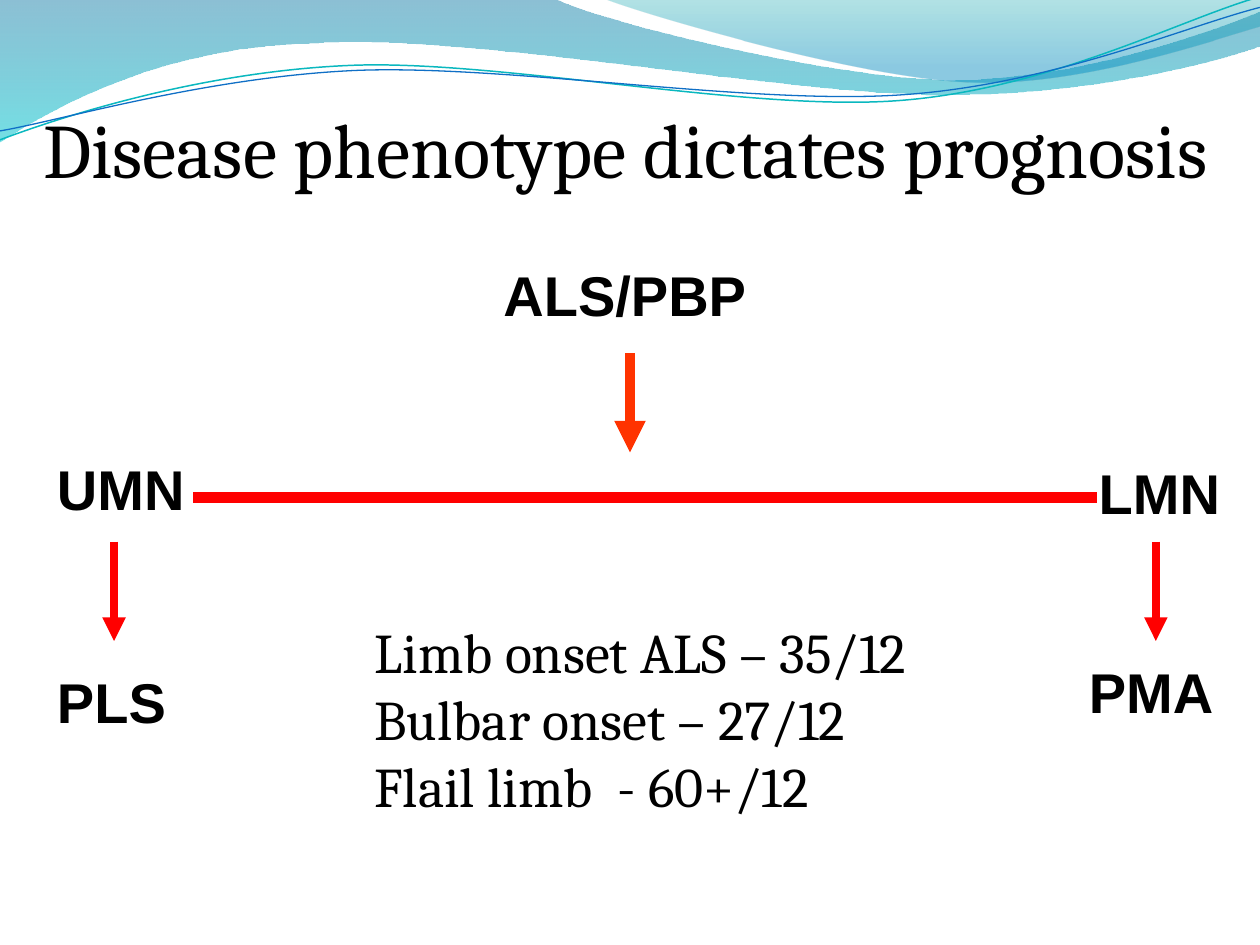
from lxml import etree
from pptx import Presentation
from pptx.dml.color import RGBColor
from pptx.enum.shapes import MSO_CONNECTOR
from pptx.enum.text import MSO_AUTO_SIZE
from pptx.oxml.ns import qn
from pptx.util import Cm, Pt

STRAIGHT = MSO_CONNECTOR.STRAIGHT
GROW = MSO_AUTO_SIZE.SHAPE_TO_FIT_TEXT

BLACK = RGBColor(0x00, 0x00, 0x00)
RED = RGBColor(0xFF, 0x00, 0x00)
ORANGE = RGBColor(0xFF, 0x33, 0x00)
DEEP_BLUE = RGBColor(0x00, 0x74, 0xA1)
AQUA = RGBColor(0x00, 0xC6, 0xCF)
TEAL = RGBColor(0x00, 0xA1, 0xA9)
SKY = RGBColor(0x00, 0x8B, 0xBF)
TURQUOISE = RGBColor(0x0A, 0xB8, 0xBF)
BLUE = RGBColor(0x0F, 0x6F, 0xC6)

WIDE_WAVE = [
    [(0, 0)],
    [(11.18, -0.03)],
    [(12.09, 0.43), (16.87, 1.6), (19.25, 1.6)],
    [(21.67, 1.6), (24.33, 0.66), (25.4, 0.23)],
    [(25.43, 0.91)],
    [(24.97, 1.12), (22.1, 1.93), (18.95, 1.91)],
    [(15.8, 1.9), (9.7, 0.71), (6.53, 0.86)],
    [(3.28, 0.91), (1.17, 2.11), (-0.03, 2.87)],
    [(0, 0)],
]
RIGHT_WAVE = [
    [(12.17, -0.03)],
    [(12.93, 0.28), (17.32, 1.57), (19.53, 1.65)],
    [(21.74, 1.75), (24.41, 0.81), (25.4, 0.53)],
    [(25.4, 0)],
    [(12.17, -0.03)],
]
TURQUOISE_STRAND = [
    [(0, 2.82)],
    [(1.22, 2.36), (4.01, 1.45), (7.04, 1.32)],
    [(10.03, 1.19), (15.06, 2.26), (18.11, 2.03)],
    [(21.16, 1.8), (23.83, 0.38), (25.35, -0.05)],
]
BLUE_STRAND = [
    [(0, 2.64)],
    [(1.19, 2.44), (4.17, 1.55), (7.19, 1.42)],
    [(10.24, 1.3), (15.16, 2.13), (18.21, 1.91)],
    [(21.23, 1.7), (23.9, 0.53), (25.4, 0.15)],
]


def bend(outline, segments):
    sides = list(outline._element.iter(qn("a:lnTo")))
    for side, segment in zip(sides, segments):
        if len(segment) == 3:
            curve = etree.Element(qn("a:cubicBezTo"))
            for x, y in segment:
                etree.SubElement(curve, qn("a:pt"), x=str(Cm(x) - outline.left),
                                 y=str(Cm(y) - outline.top))
            side.getparent().replace(side, curve)


def add_outline(page, segments, close):
    start, *corners = [(Cm(x), Cm(y)) for x, y in (segment[-1] for segment in segments)]
    builder = page.shapes.build_freeform(*start)
    builder.add_line_segments(corners, close=close)
    outline = builder.convert_to_shape()
    outline.shadow.inherit = False
    bend(outline, segments[1:])
    return outline


def add_wave(page, segments, stops):
    wave = add_outline(page, segments, True)
    wave.line.fill.background()
    wave.fill.gradient()
    wave.fill.gradient_angle = 270
    for stop, (position, color, opacity) in zip(wave.fill.gradient_stops, stops):
        stop.position = position
        stop.color.rgb = color
    colors = wave._element.spPr.iter(qn("a:srgbClr"))
    for element, (position, color, opacity) in zip(colors, stops):
        etree.SubElement(element, qn("a:alpha"), val=str(opacity * 1000))


def add_strand(page, segments, color, width):
    strand = add_outline(page, segments, False)
    strand.fill.background()
    strand.line.color.rgb = color
    strand.line.width = Pt(width)


def add_line(page, start, end, color, width, arrow=True):
    line = page.shapes.add_connector(STRAIGHT, *map(Cm, start + end))
    line.line.color.rgb = color
    line.line.width = Pt(width)
    properties = line._element.spPr
    if arrow:
        etree.SubElement(properties.find(qn("a:ln")), qn("a:tailEnd"), type="triangle")
    etree.SubElement(properties, qn("a:effectLst"))


def add_text(page, text, place, font, size, bold=False, wrap=True):
    box = page.shapes.add_textbox(*map(Cm, place))
    frame = box.text_frame
    frame.text = text
    frame.word_wrap = wrap
    frame.auto_size = GROW
    for para in frame.paragraphs:
        for span in para.runs:
            span.font.name = font
            span.font.size = Pt(size)
            span.font.bold = bold
            span.font.color.rgb = BLACK


def add_label(page, text, place, wrap=False):
    add_text(page, text, place, "Arial", 32, True, wrap)


def main():
    deck = Presentation()
    deck.slide_width, deck.slide_height = Cm(25.4), Cm(19.05)
    page = deck.slides.add_slide(deck.slide_layouts[6])

    add_wave(page, WIDE_WAVE, [(0, DEEP_BLUE, 45), (1, AQUA, 55)])
    add_wave(page, RIGHT_WAVE, [(0, TEAL, 30), (0.8, SKY, 45)])
    add_strand(page, TURQUOISE_STRAND, TURQUOISE, 0.85)
    add_strand(page, BLUE_STRAND, BLUE, 0.75)

    add_line(page, (3.9, 10.03), (22.11, 10.03), RED, 6, arrow=False)
    for x in (2.3, 23.3):
        add_line(page, (x, 10.92), (x, 12.92), RED, 4.5)
    add_line(page, (12.7, 7.12), (12.7, 9.12), ORANGE, 6)

    add_label(page, "LMN", (21.9, 9.12, 3.5, 1.6), wrap=True)
    add_label(page, "UMN", (0.9, 9.04, 3.1, 1.6))
    add_label(page, "ALS/PBP", (9.9, 5.13, 5.46, 1.6), wrap=True)
    add_label(page, "PLS", (0.9, 13.34, 2.72, 1.6))
    add_label(page, "PMA", (21.7, 13.13, 3.02, 1.6))

    add_text(page, "Disease phenotype dictates prognosis",
             (0.62, 1.92, 24.56, 4.01), "Cambria", 44)
    add_text(page, "Limb onset ALS – 35/12\nBulbar onset – 27/12\nFlail limb  - 60+/12",
             (7.3, 12.32, 12.6, 4.37), "Cambria", 32)

    deck.save("out.pptx")


if __name__ == "__main__":
    main()
